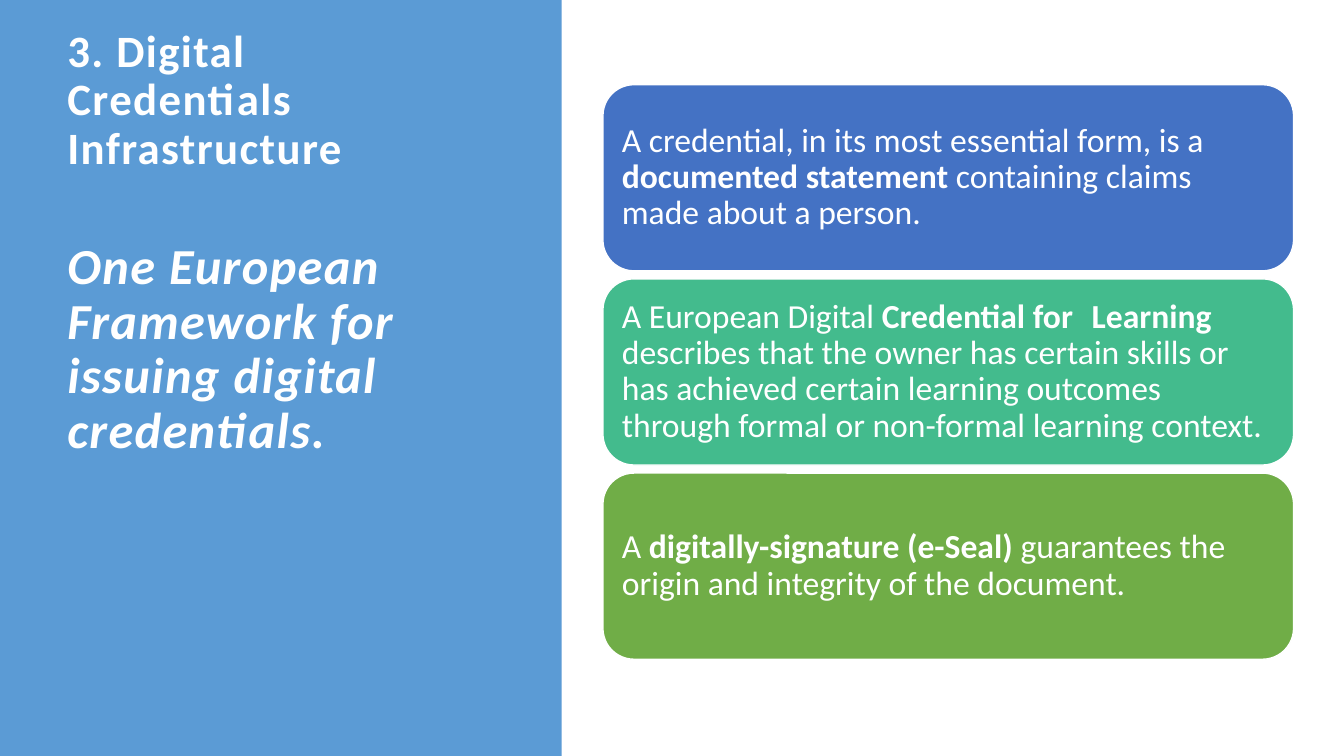
from pptx import Presentation
from pptx.dml.color import RGBColor as RGB
from pptx.enum.shapes import MSO_SHAPE as Shape
from pptx.enum.text import MSO_ANCHOR as Anchor, PP_ALIGN as Align
from pptx.oxml.ns import qn
from pptx.util import Inches, Pt
from lxml.etree import SubElement

W, H = 13.33, 7.5
COLORS = {"panel": "5B9BD5", "blue": "4472C4", "teal": "43BB8D",
          "green": "70AD47", "white": "FFFFFF"}
HEADINGS = [
    ("3. Digital Credentials Infrastructure", {"size": Pt(32), "bold": True}),
    ("One European Framework for issuing digital credentials.",
     {"size": Pt(36), "bold": True, "italic": True}),
]
CARDS = [
    ("blue", ["A credential, in its most essential form, is a ",
              "documented statement ",
              "containing claims made about a person."]),
    ("teal", ["A European Digital ", "Credential for \tLearning ",
              "describes that the owner has certain skills or has achieved "
              "certain learning outcomes through formal or non-formal "
              "learning context."]),
    ("green", ["A ", "digitally-signature (e-Seal) ",
               "guarantees the origin and integrity of the document."]),
]


def add_block(s, kind, box, color):
    """Add a filled shape without a line or shadow."""
    sp = s.shapes.add_shape(kind, *map(Inches, box))
    sp.shadow.inherit = False
    sp.fill.solid()
    sp.fill.fore_color.rgb = RGB.from_string(COLORS[color])
    sp.line.fill.background()
    return sp


def set_frame(tf, **margins):
    """Wrap the text, centre it vertically and set its margins."""
    tf.word_wrap = True
    tf.vertical_anchor = Anchor.MIDDLE
    for side, size in margins.items():
        setattr(tf, f"margin_{side}", Inches(size))


def add_run(p, text, **style):
    """Add a white Calibri run with the given font values."""
    r = p.add_run()
    r.text = text
    for name, value in {"name": "Calibri", **style}.items():
        setattr(r.font, name, value)
    r.font.color.rgb = RGB.from_string(COLORS["white"])
    return r


def add_title_panel(s, x, y, w, h):
    """Draw the coloured panel with the title and the statement."""
    add_block(s, Shape.RECTANGLE, (x, y, w, h), "panel")
    box = (x + 0.57, y + 0.09 * h, 0.747 * w, 0.555 * W * 0.5625)
    tf = s.shapes.add_textbox(*map(Inches, box)).text_frame
    set_frame(tf, left=0.1, right=0.1, top=0.05, bottom=0.72)
    for i, (text, style) in enumerate(HEADINGS):
        p = tf.add_paragraph() if i else tf.paragraphs[0]
        p.line_spacing = 0.9
        p.space_before = Pt(48 * i)
        r = add_run(p, text, **style)
        r.font._element.set("spc", "100")


def add_card(s, box, color, parts):
    """Draw one rounded card whose middle part is bold."""
    sp = add_block(s, Shape.ROUNDED_RECTANGLE, box, color)
    sp.line.color.rgb = RGB.from_string(COLORS["white"])
    sp.line.width = Pt(1)
    set_frame(sp.text_frame, left=0.1, right=0.1, top=0.1, bottom=0.1)
    p = sp.text_frame.paragraphs[0]
    p.alignment = Align.LEFT
    p.line_spacing = 0.9
    tabs = SubElement(p._p.get_or_add_pPr(), qn("a:tabLst"))
    SubElement(tabs, qn("a:tab"), pos=str(Inches(4.66)), algn="l")
    for i, text in enumerate(parts):
        add_run(p, text, size=Pt(24), bold=i == 1)


def add_cards(s, x, y, w, h, gap=0.08):
    """Stack the cards at equal heights in the given box."""
    n = len(CARDS)
    card_h = (h - gap * (n - 1)) / n
    for i, (color, parts) in enumerate(CARDS):
        add_card(s, (x, y + i * (card_h + gap), w, card_h), color, parts)


def main():
    """Build and save the slide."""
    prs = Presentation()
    prs.slide_width, prs.slide_height = Inches(W), Inches(H)
    s = prs.slides.add_slide(prs.slide_layouts[6])
    add_title_panel(s, 0, 0, 5.57, H)
    add_cards(s, 5.98, 0.84, 6.85, 5.7)
    prs.save("out.pptx")


if __name__ == "__main__":
    main()
